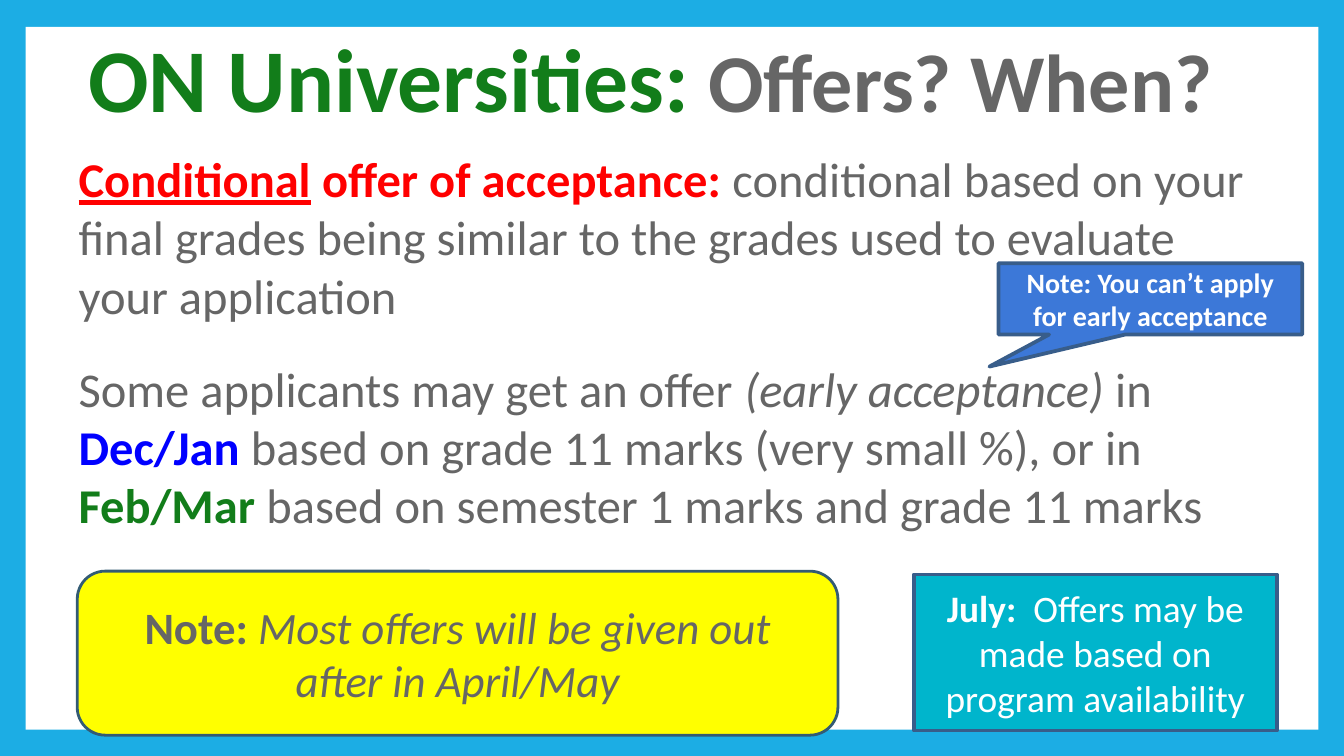
from dataclasses import dataclass

from pptx import Presentation
from pptx.dml.color import RGBColor
from pptx.enum.shapes import MSO_SHAPE
from pptx.enum.text import MSO_ANCHOR, MSO_AUTO_SIZE, PP_ALIGN
from pptx.util import Pt

PX = 4572  # EMU per px, 200 px to the inch


@dataclass(frozen=True)
class Theme:
    font: str = "Calibri"
    sky: str = "1CADE4"
    white: str = "FFFFFF"
    grey: str = "666666"
    green: str = "127D1A"
    red: str = "FF0000"
    blue: str = "0000FF"
    yellow: str = "FFFF00"
    teal: str = "00B5CC"
    callout: str = "3C78D8"
    navy: str = "385D8A"
    slate: str = "335B74"
    title: int = 48
    subtitle: int = 44
    body: int = 26
    note: int = 24
    july: int = 20
    small: int = 15


T = Theme()


def rgb(value):
    return RGBColor.from_string(value)


def emu(box):
    return [n * PX for n in box]


def set_frame(tf, anchor, inset=(16, 8)):
    tf.word_wrap = True
    tf.auto_size = MSO_AUTO_SIZE.NONE
    tf.vertical_anchor = anchor
    tf.margin_left = tf.margin_right = inset[0] * PX
    tf.margin_top = tf.margin_bottom = inset[1] * PX


def write(p, runs, size, color, align=PP_ALIGN.LEFT):
    """Fill a paragraph from (text, font overrides) pairs."""
    p.alignment = align
    p.font.name, p.font.size = T.font, Pt(size)
    p.font.color.rgb = rgb(color)
    for text, style in runs:
        r = p.add_run()
        r.text = text
        for key, value in style.items():
            if key == "color":
                r.font.color.rgb = rgb(value)
            else:
                setattr(r.font, key, value)


def add_box(s, kind, box, fill, line=None, width=2, adjust=()):
    sp = s.shapes.add_shape(kind, *emu(box))
    sp.shadow.inherit = False
    sp.fill.solid()
    sp.fill.fore_color.rgb = rgb(fill)
    if line:
        sp.line.color.rgb = rgb(line)
        sp.line.width = Pt(width)
    else:
        sp.line.fill.background()
    for i, value in enumerate(adjust):
        sp.adjustments[i] = value
    return sp


def add_backdrop(s, box):
    s.background.fill.solid()
    s.background.fill.fore_color.rgb = rgb(T.sky)
    panel = add_box(s, MSO_SHAPE.RECTANGLE, box, T.white)
    s.shapes.title.element.addprevious(panel.element)  # behind the title


def add_title(s, box):
    sp = s.shapes.title
    sp.left, sp.top, sp.width, sp.height = emu(box)
    set_frame(sp.text_frame, MSO_ANCHOR.TOP)
    p = sp.text_frame.paragraphs[0]
    write(p, [("ON Universities:", {"color": T.green, "size": Pt(T.title)}),
              (" Offers? When?", {})], T.subtitle, T.grey)
    p.font.bold = True


def add_body(s, box):
    tf = s.shapes.add_textbox(*emu(box)).text_frame
    set_frame(tf, MSO_ANCHOR.TOP)
    red = {"color": T.red, "bold": True}
    write(tf.paragraphs[0], [
        ("Conditional", {**red, "underline": True}),
        (" offer of acceptance:", red),
        (" conditional based on your final grades being similar to the grades "
         "used to evaluate your application", {}),
    ], T.body, T.grey)
    p = tf.add_paragraph()
    p.space_before = Pt(18.8)
    write(p, [
        ("Some applicants may get an offer ", {}),
        ("(early acceptance)", {"italic": True}),
        (" in ", {}),
        ("Dec/Jan", {"color": T.blue, "bold": True}),
        (" based on grade 11 marks (very small %), or in ", {}),
        ("Feb/Mar", {"color": T.green, "bold": True}),
        (" based on semester 1 marks and grade 11 marks", {}),
    ], T.body, T.grey)


def add_note(sp, runs, size, color, inset=(16, 8)):
    """Write centred text inside a shape."""
    set_frame(sp.text_frame, MSO_ANCHOR.MIDDLE, inset)
    write(sp.text_frame.paragraphs[0], runs, size, color, PP_ALIGN.CENTER)


def add_april_note(s, box):
    sp = add_box(s, MSO_SHAPE.ROUNDED_RECTANGLE, box, T.yellow, T.slate, 1.5, [0.17])
    add_note(sp, [("Note: ", {"bold": True}),
                  ("Most offers will be given out after in April/May",
                   {"italic": True})], T.note, T.grey, (20, 20))


def add_early_callout(s, box):
    sp = add_box(s, MSO_SHAPE.RECTANGULAR_CALLOUT, box, T.callout, T.navy,
                 adjust=[-0.53, 0.95])
    add_note(sp, [("Note: You can’t apply for early acceptance", {"bold": True})],
             T.small, T.white)


def add_july_callout(s, box):
    sp = add_box(s, MSO_SHAPE.RECTANGULAR_CALLOUT, box, T.teal, T.navy,
                 adjust=[-0.5, 0.37])
    add_note(sp, [("July:  ", {"bold": True}),
                  ("Offers may be made based on program availability", {})],
             T.july, T.white)


def main():
    prs = Presentation()
    prs.slide_width, prs.slide_height = emu((2000, 1125))
    s = prs.slides.add_slide(prs.slide_layouts.get_by_name("Title Only"))
    add_backdrop(s, (38, 40, 1924, 1046))
    add_title(s, (115, 26, 1800, 188))
    add_april_note(s, (115, 850, 1132, 244))
    add_early_callout(s, (1486, 392, 452, 106))
    add_body(s, (101, 214, 1800, 636))
    add_july_callout(s, (1360, 855, 540, 232))
    prs.save("out.pptx")


if __name__ == "__main__":
    main()
